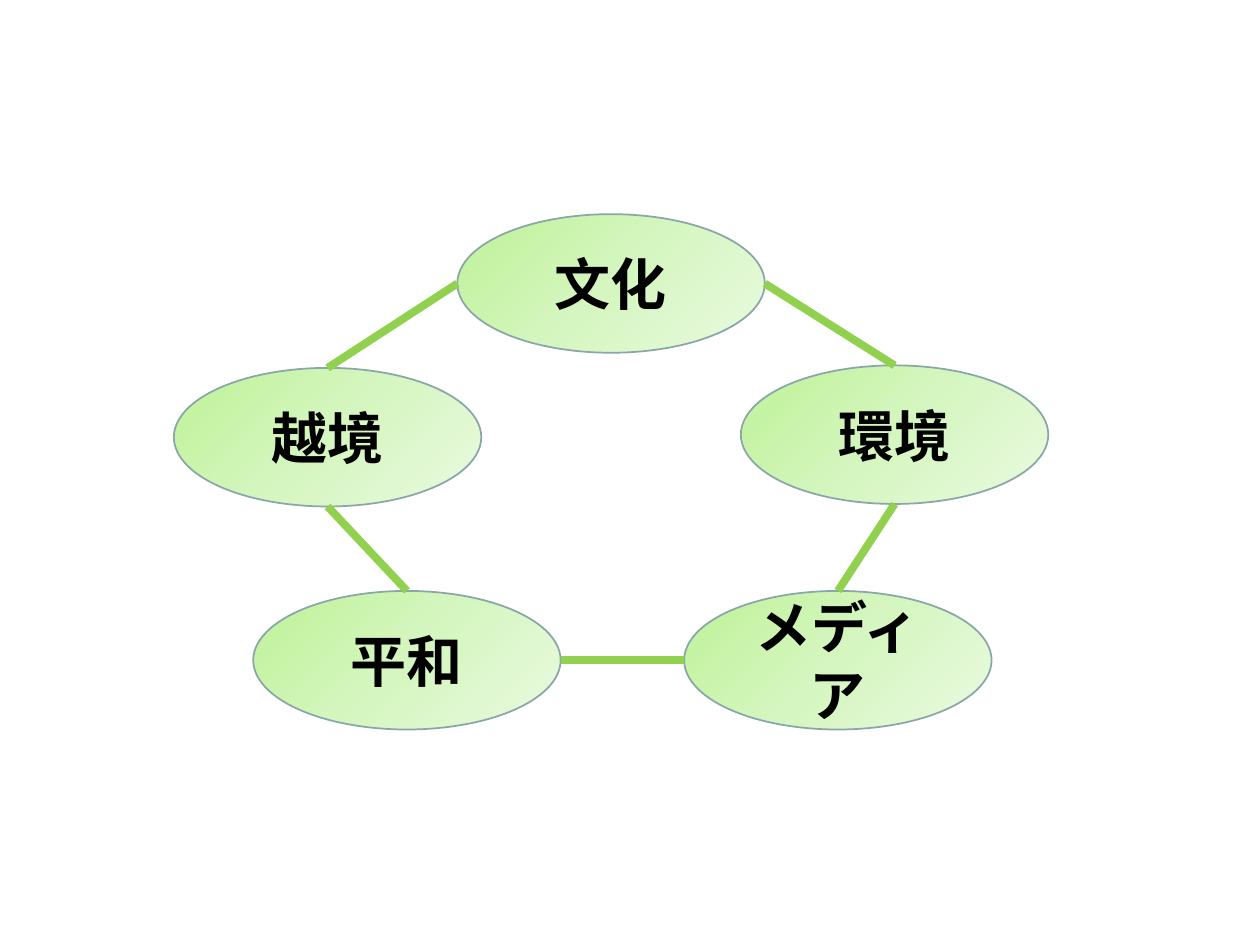
"""Ring of five linked themes drawn as ellipses joined by lines."""
import copy

import pptx
import pptx.dml.color
import pptx.enum.shapes
import pptx.enum.text
import pptx.oxml.ns
import pptx.util
from lxml import etree

GREENS = [
    (0, pptx.dml.color.RGBColor(0xBE, 0xF2, 0x97)),
    (0.5, pptx.dml.color.RGBColor(0xD5, 0xF6, 0xC0)),
    (1, pptx.dml.color.RGBColor(0xEA, 0xFA, 0xE0)),
]
OUTLINE = pptx.dml.color.RGBColor(0x8A, 0xA6, 0xA8)
LINK = pptx.dml.color.RGBColor(0x92, 0xD0, 0x50)
BLACK = pptx.dml.color.RGBColor(0, 0, 0)
qn = pptx.oxml.ns.qn

deck = pptx.Presentation()
deck.slide_width = pptx.util.Inches(10)
deck.slide_height = pptx.util.Inches(7.5)
slide = deck.slides.add_slide(deck.slide_layouts[6])

theme_width = pptx.util.Inches(2.44)
theme_height = pptx.util.Inches(1.1)
lower_row = 4.69
themes = {
    "文化": (3.63, 1.7),
    "越境": (1.38, 2.92),
    "平和": (2.01, lower_row),
    "メディア": (5.43, lower_row),
    "環境": (5.88, 2.9),
}
sides = {"top": (0.5, 0), "left": (0, 0.5), "bottom": (0.5, 1), "right": (1, 0.5)}
links = [
    ("越境", "top", "文化", "left"),
    ("越境", "bottom", "平和", "top"),
    ("平和", "right", "メディア", "left"),
    ("環境", "top", "文化", "right"),
    ("メディア", "top", "環境", "bottom"),
]


def edge_point(theme, side):
    left, top = themes[theme]
    across, down = sides[side]
    return (pptx.util.Inches(left) + int(across * theme_width),
            pptx.util.Inches(top) + int(down * theme_height))


for theme, (left, top) in themes.items():
    ellipse = slide.shapes.add_shape(
        pptx.enum.shapes.MSO_SHAPE.OVAL,
        pptx.util.Inches(left), pptx.util.Inches(top), theme_width, theme_height)
    ellipse.shadow.inherit = False
    ellipse.fill.gradient()
    ellipse.fill.gradient_angle = 315
    stop_list = ellipse.element.spPr.find(qn("a:gradFill")).find(qn("a:gsLst"))
    stop_list.insert(1, copy.deepcopy(stop_list[0]))
    for stop, (position, green) in zip(ellipse.fill.gradient_stops, GREENS):
        stop.position = position
        stop.color.rgb = green
    ellipse.line.color.rgb = OUTLINE
    ellipse.line.width = pptx.util.Pt(1)
    ellipse.text_frame.word_wrap = True
    ellipse.text_frame.vertical_anchor = pptx.enum.text.MSO_ANCHOR.MIDDLE
    label = ellipse.text_frame.paragraphs[0]
    label.text = theme
    label.alignment = pptx.enum.text.PP_ALIGN.CENTER
    label.font.name = "Arial"
    label.font.size = pptx.util.Pt(32)
    label.font.bold = True
    label.font.color.rgb = BLACK

for start, start_side, end, end_side in links:
    link = slide.shapes.add_connector(
        pptx.enum.shapes.MSO_CONNECTOR.STRAIGHT,
        *edge_point(start, start_side), *edge_point(end, end_side))
    link.line.color.rgb = LINK
    link.line.width = pptx.util.Pt(4.5)
    etree.SubElement(link.element.spPr, qn("a:effectLst"))

deck.save("out.pptx")
